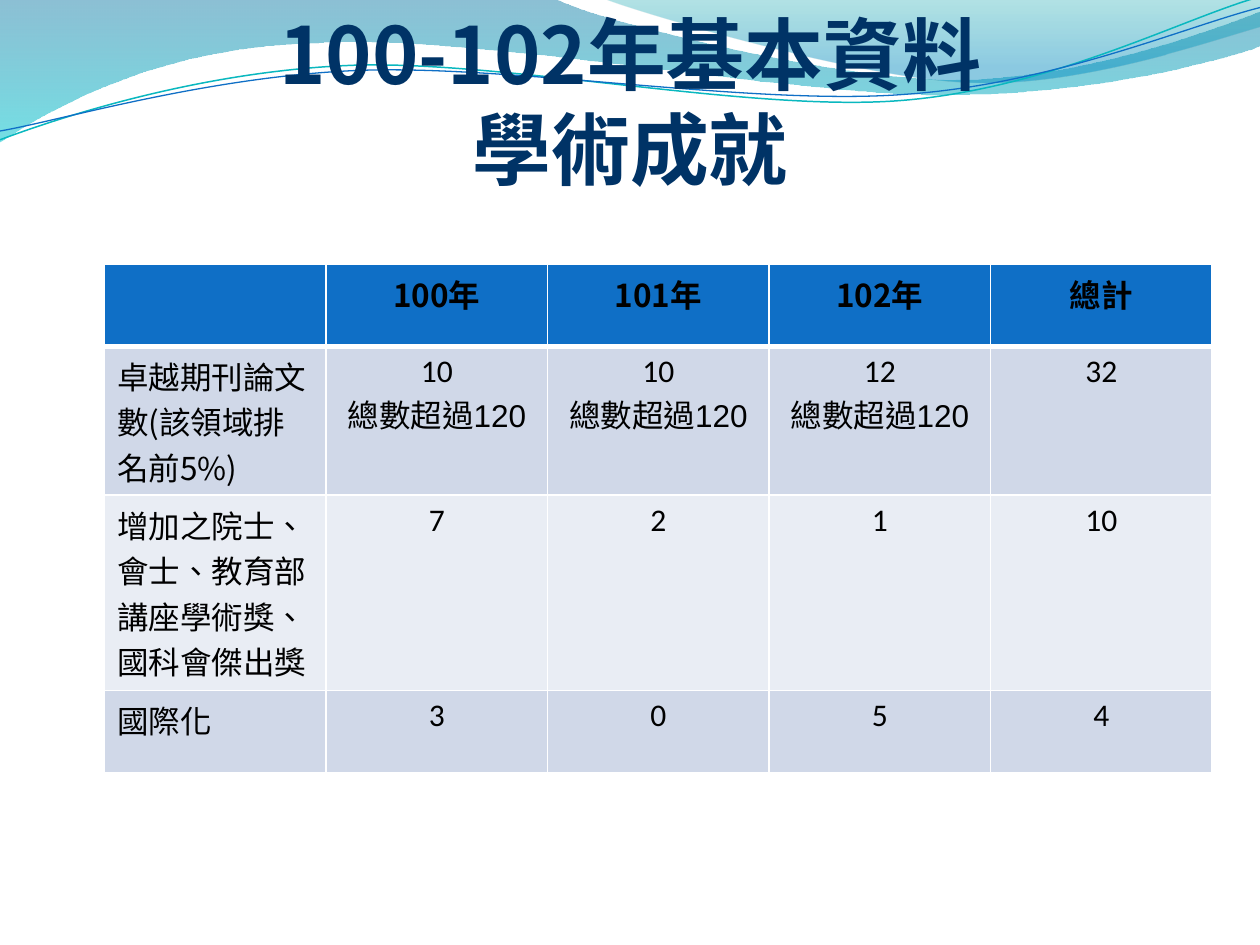
from lxml import etree
from pptx import Presentation, util as u
from pptx.dml.color import RGBColor
from pptx.enum import text
from pptx.oxml import ns

COLORS = {"title": "003366", "ink": "000000", "header": "0F6FC6", "odd": "D0D8E8",
          "even": "E9EDF4", "border": "FFFFFF", "teal": "0AB8BF", "blue": "0F6FC6",
          "deep": "0074A1", "aqua": "00C6CF", "sea": "00A1A9", "sky": "008BBF"}
CJK = "Noto Sans CJK SC"
LATIN = "Calibri"

WAVES = [
    ([(0, 0), (4.4, -0.01), (4.76, 0.17, 6.64, 0.63, 7.58, 0.63),
      (8.53, 0.63, 9.58, 0.26, 10, 0.09), (10.01, 0.36),
      (9.83, 0.44, 8.7, 0.76, 7.46, 0.75), (6.22, 0.75, 3.82, 0.28, 2.57, 0.34),
      (1.29, 0.36, 0.46, 0.83, -0.01, 1.13), (0, 0)], [(0, "deep", 45), (1, "aqua", 55)]),
    ([(4.79, -0.01), (5.09, 0.11, 6.82, 0.62, 7.69, 0.65), (8.56, 0.69, 9.61, 0.32, 10, 0.21),
      (10, 0), (4.79, -0.01)], [(0, "sea", 30), (0.8, "sky", 45)]),
]
STRANDS = [
    ([(0, 1.11), (0.48, 0.93, 1.58, 0.57, 2.77, 0.52), (3.95, 0.47, 5.93, 0.89, 7.13, 0.8),
      (8.33, 0.71, 9.38, 0.15, 9.98, -0.02)], "teal", 0.85),
    ([(0, 1.04), (0.47, 0.96, 1.64, 0.61, 2.83, 0.56), (4.03, 0.51, 5.97, 0.84, 7.17, 0.75),
      (8.36, 0.67, 9.41, 0.21, 10, 0.06)], "blue", 0.75),
]
OVER = "總數|超過120"
ROWS = [
    ["", "100年", "101年", "102年", "總計"],
    ["卓越期刊論文數(該領域排名前5%)", f"10\n{OVER}", f"10\n{OVER}", f"12\n{OVER}", "32"],
    ["增加之院士、會士、教育部講座學術獎、國科會傑出獎", "7", "2", "1", "10"],
    ["國際化", "3", "0", "5", "4"],
]
ROW_HEIGHTS = [0.65, 1.18, 1.55, 0.65]


def rgb(name):
    """Return a named colour."""
    return RGBColor.from_string(COLORS[name])


class Deck:
    """Draws styled elements on a grid of 10 columns by 7.5 rows."""

    def __init__(self):
        """Open a deck with one blank slide."""
        self.prs = Presentation()
        self.prs.slide_width, self.prs.slide_height = u.Inches(10), u.Inches(7.5)
        self.unit = self.prs.slide_width / 10
        self.s = self.prs.slides.add_slide(self.prs.slide_layouts[6])

    def grid(self, *values):
        """Convert grid units to lengths."""
        return [u.Emu(round(v * self.unit)) for v in values]

    def font(self, p, size, color, bold, name=CJK):
        """Style a paragraph's font for Latin and East Asian text."""
        font = p.font
        font.size, font.bold, font.name = u.Pt(size), bold, name
        font.color.rgb = rgb(color)
        latin = font._element.find(ns.qn("a:latin"))
        latin.addnext(latin.makeelement(ns.qn("a:ea"), {"typeface": CJK}))
        for r in p.runs:
            r._r.get_or_add_rPr().set("lang", "zh-TW")

    def outline(self, path, closed):
        """Build a shape along a path of corners and cubic curves."""
        ends = [self.grid(*seg[-2:]) for seg in path]
        builder = self.s.shapes.build_freeform(*ends[0])
        builder.add_line_segments(ends[1:], close=closed)
        sp = builder.convert_to_shape()
        for seg, node in zip(path[1:], list(sp._element.iter(ns.qn("a:lnTo")))):
            if len(seg) == 6:
                node.tag = ns.qn("a:cubicBezTo")
                for i in (2, 0):
                    x, y = self.grid(*seg[i:i + 2])
                    pt = node.makeelement(ns.qn("a:pt"), {"x": str(x - sp.left), "y": str(y - sp.top)})
                    node.insert(0, pt)
        sp.shadow.inherit = False
        return sp

    def wave(self, path, stops):
        """Draw a translucent band with a downward gradient."""
        sp = self.outline(path, True)
        sp.line.fill.background()
        sp.fill.gradient()
        sp.fill.gradient_angle = 270
        for stop, (position, color, _) in zip(sp.fill.gradient_stops, stops):
            stop.position, stop.color.rgb = position, rgb(color)
        for clr, (_, _, alpha) in zip(sp._element.spPr.iter(ns.qn("a:srgbClr")), stops):
            etree.SubElement(clr, ns.qn("a:alpha"), val=str(alpha * 1000))

    def strand(self, path, color, width):
        """Draw a thin curved line."""
        sp = self.outline(path, False)
        sp.fill.background()
        sp.line.color.rgb, sp.line.width = rgb(color), u.Pt(width)

    def title(self, content, *box):
        """Write the bottom-anchored heading."""
        tf = self.s.shapes.add_textbox(*self.grid(*box)).text_frame
        tf.word_wrap, tf.vertical_anchor = True, text.MSO_ANCHOR.BOTTOM
        tf.margin_left = tf.margin_right = tf.margin_bottom = 0
        p = tf.paragraphs[0]
        p.text, p.alignment = content, text.PP_ALIGN.CENTER
        self.font(p, 45, "title", True)

    def borders(self, cell, top, bottom):
        """Give a cell white edges."""
        tc_pr = cell._tc.get_or_add_tcPr()
        for tag, width in (("lnL", 1), ("lnR", 1), ("lnT", top), ("lnB", bottom)):
            ln = etree.SubElement(tc_pr, ns.qn(f"a:{tag}"), w=str(u.Pt(width)))
            fill = etree.SubElement(ln, ns.qn("a:solidFill"))
            etree.SubElement(fill, ns.qn("a:srgbClr"), val=COLORS["border"])

    def cell(self, cell, content, row, col):
        """Fill and style one table cell."""
        self.borders(cell, 3 if row == 1 else 1, 3 if row == 0 else 1)
        cell.fill.solid()
        cell.fill.fore_color.rgb = rgb("header" if row == 0 else "odd" if row % 2 else "even")
        tf = cell.text_frame
        for i, line in enumerate(content.split("\n")):
            p = tf.add_paragraph() if i else tf.paragraphs[0]
            p.alignment = text.PP_ALIGN.CENTER if col or not row else text.PP_ALIGN.LEFT
            for j, part in enumerate(line.split("|") if line else []):
                r = p.add_run()
                r.text = part
                if j:
                    r.font.name = "Arial"
            self.font(p, 18, "ink", row == 0, LATIN if row and col else CJK)

    def table(self, rows, heights, left, top, width):
        """Draw a table with equal columns."""
        box = self.grid(left, top, width, sum(heights))
        tbl = self.s.shapes.add_table(len(rows), len(rows[0]), *box).table
        for i, (row, height) in enumerate(zip(rows, self.grid(*heights))):
            tbl.rows[i].height = height
            for j, content in enumerate(row):
                self.cell(tbl.cell(i, j), content, i, j)


def main():
    """Build the academic achievements slide."""
    deck = Deck()
    for wave in WAVES:
        deck.wave(*wave)
    for strand in STRANDS:
        deck.strand(*strand)
    deck.title("100-102年基本資料\v學術成就", 0.5, 0.3, 9, 1.25)
    deck.table(ROWS, ROW_HEIGHTS, 0.83, 2.1, 8.79)
    deck.prs.save("out.pptx")


if __name__ == "__main__":
    main()
